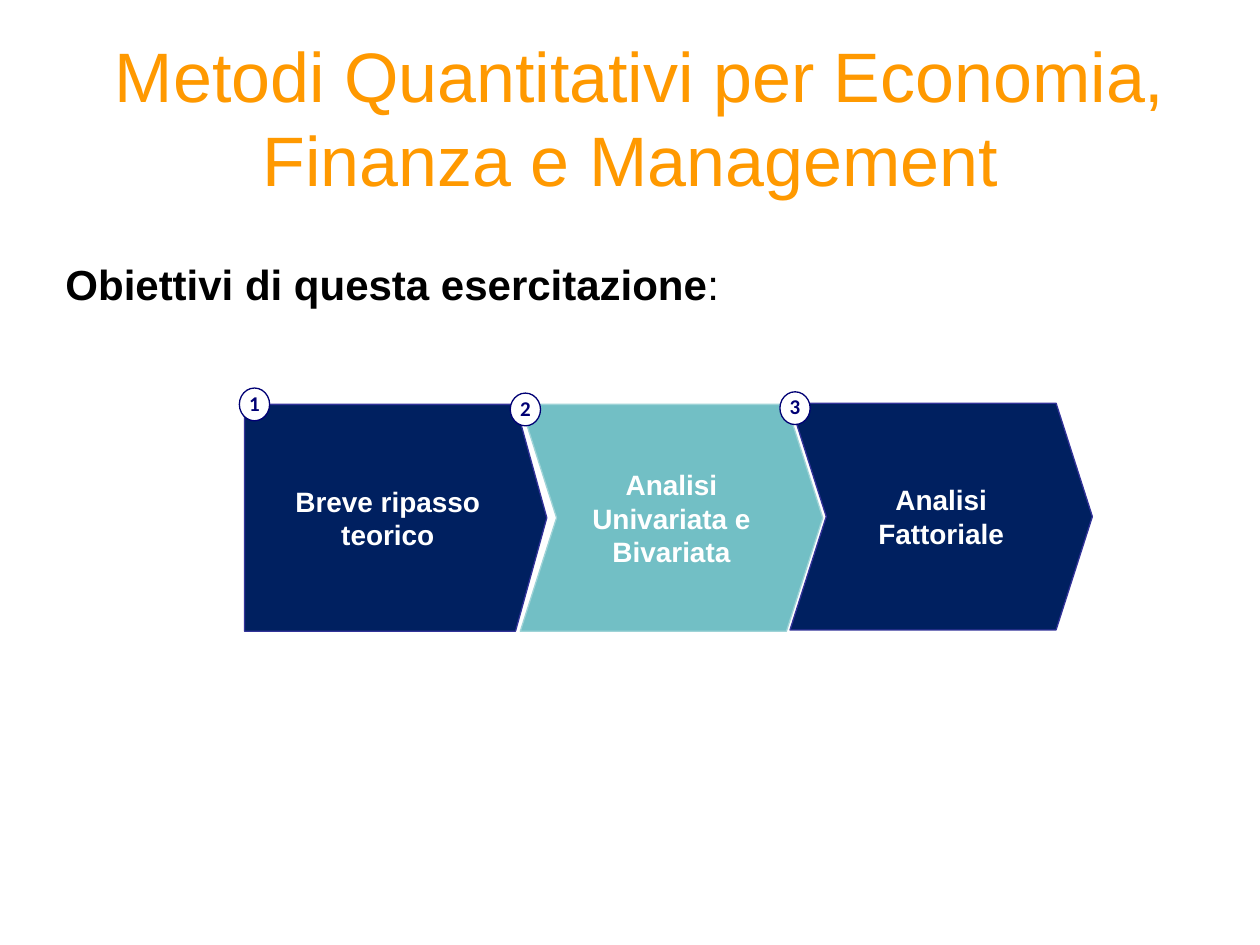
from pptx import Presentation
from pptx.dml.color import RGBColor
from pptx.enum.shapes import MSO_SHAPE
from pptx.enum.text import MSO_ANCHOR, PP_ALIGN
from pptx.util import Inches, Pt

COLORS = {
    "title": "FF9900",
    "text": "000000",
    "white": "FFFFFF",
    "navy": "002060",
    "navy_line": "333399",
    "teal": "72BFC5",
    "teal_line": "9ED3D7",
    "badge": "000074",
}


class Deck:
    columns, rows = 100, 75
    font = "Arial"

    def __init__(self, width, height):
        self.prs = Presentation()
        self.prs.slide_width = Inches(width)
        self.prs.slide_height = Inches(height)
        self.s = None

    def add_slide(self):
        self.s = self.prs.slides.add_slide(self.prs.slide_layouts[6])

    def box(self, left, top, width, height):
        column = self.prs.slide_width / self.columns
        row = self.prs.slide_height / self.rows
        return (round(left * column), round(top * row),
                round(width * column), round(height * row))

    def color(self, name):
        return RGBColor.from_string(COLORS[name])

    def style(self, p, size, color, bold=None, font=None):
        p.font.name = font or self.font
        p.font.size = Pt(size)
        p.font.color.rgb = self.color(color)
        p.font.bold = bold

    def title(self, box, text):
        tf = self.s.shapes.add_textbox(*self.box(*box)).text_frame
        tf.word_wrap = True
        tf.vertical_anchor = MSO_ANCHOR.MIDDLE
        p = tf.paragraphs[0]
        p.text = text
        p.alignment = PP_ALIGN.CENTER
        self.style(p, 40, "title")

    def heading(self, box, text, ending):
        tf = self.s.shapes.add_textbox(*self.box(*box)).text_frame
        tf.word_wrap = True
        tf.margin_left = Inches(0.19)
        p = tf.paragraphs[0]
        p.space_before = Pt(3)
        self.style(p, 24, "text")
        for part, bold in ((text, True), (ending, False)):
            r = p.add_run()
            r.text = part
            r.font.bold = bold

    def shape(self, kind, box, fill, line):
        sp = self.s.shapes.add_shape(kind, *self.box(*box))
        sp.shadow.inherit = False
        sp.fill.solid()
        sp.fill.fore_color.rgb = self.color(fill)
        sp.line.color.rgb = self.color(line)
        sp.line.width = Pt(0.75)
        sp.text_frame.vertical_anchor = MSO_ANCHOR.MIDDLE
        return sp

    def step(self, kind, notch, left, top, text, fill):
        sp = self.shape(kind, (left, top, 24, 18), fill, f"{fill}_line")
        sp.adjustments[0] = notch
        tf = sp.text_frame
        tf.word_wrap = True
        tf.margin_left = tf.margin_right = Inches(0.08)
        tf.margin_top = tf.margin_bottom = Inches(0.04)
        p = tf.paragraphs[0]
        p.text = text
        p.alignment = PP_ALIGN.CENTER
        self.style(p, 16, "white", True)

    def badge(self, left, top, number):
        sp = self.shape(MSO_SHAPE.OVAL, (left, top, 2.4, 2.6), "white", "badge")
        tf = sp.text_frame
        tf.word_wrap = False
        p = tf.paragraphs[0]
        p.text = str(number)
        p.alignment = PP_ALIGN.CENTER
        p.line_spacing = 0.9
        self.style(p, 12, "badge", True, "Calibri")


def main():
    deck = Deck(10, 7.5)
    deck.add_slide()
    deck.title((5, 3, 90, 12.5),
               " Metodi Quantitativi per Economia, Finanza e Management")
    deck.heading((3.3, 20, 95, 35.3), "Obiettivi di questa esercitazione", ":")
    plate, chevron = MSO_SHAPE.PENTAGON, MSO_SHAPE.CHEVRON
    steps = [
        (plate, 0.138, 19.4, 32.1, "Breve ripasso teorico", "navy", 19, 30.8),
        (chevron, 0.16, 41.3, 32.1, "Analisi Univariata e Bivariata", "teal", 40.5, 31.2),
        (chevron, 0.16, 62.7, 32, "Analisi Fattoriale", "navy", 61.9, 31.1),
    ]
    for number, (*step, badge_left, badge_top) in enumerate(steps, 1):
        deck.step(*step)
        deck.badge(badge_left, badge_top, number)
    deck.prs.save("out.pptx")


if __name__ == "__main__":
    main()
